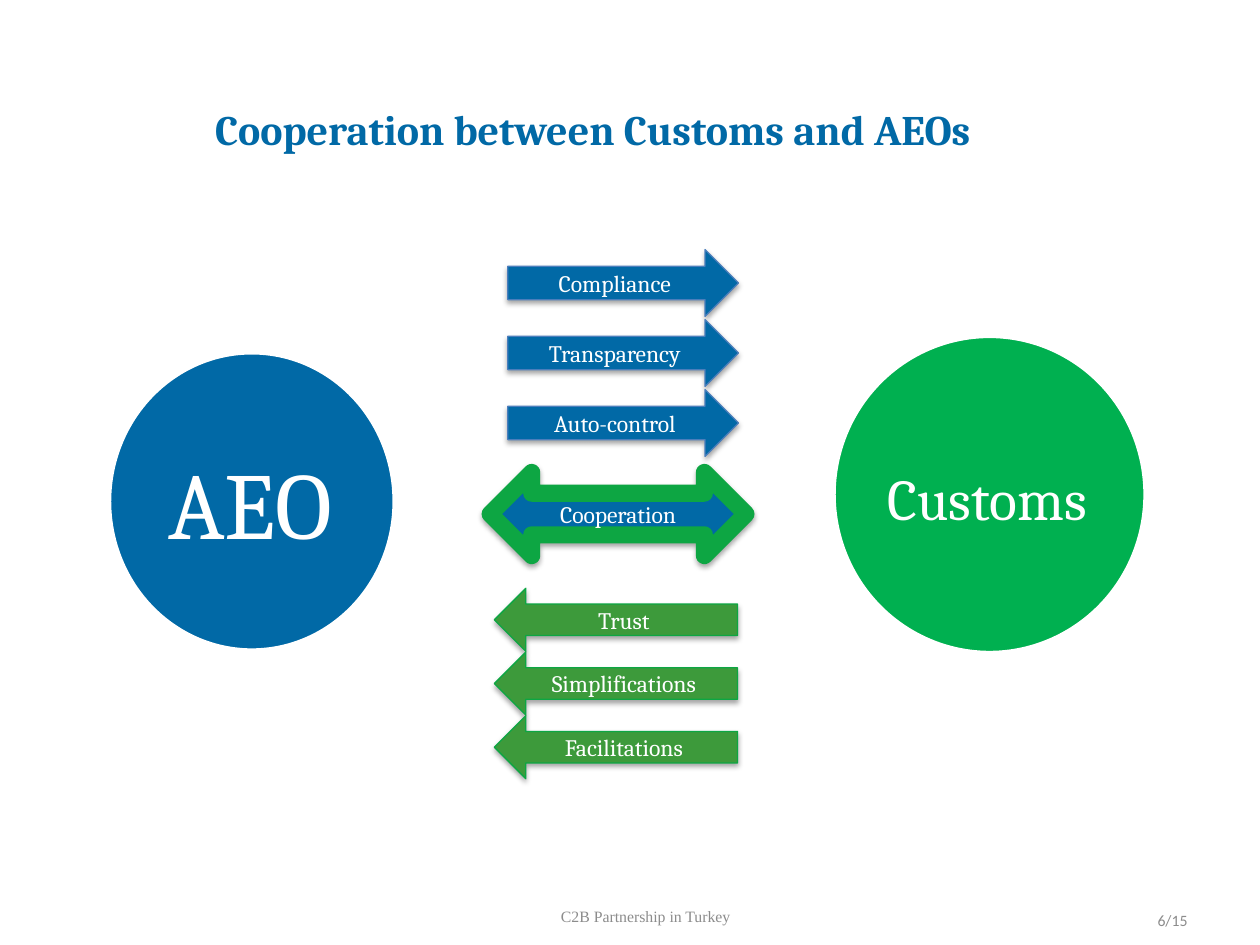
from lxml.etree import SubElement
from pptx import Presentation
from pptx.dml.color import RGBColor
from pptx.enum.shapes import MSO_SHAPE
from pptx.enum.text import MSO_ANCHOR, PP_ALIGN
from pptx.oxml.ns import qn
from pptx.util import Pt

HUES = {"blue": "0169A6", "edge": "4B7EBC", "green": "00B050", "leaf": "3D9A3B",
        "rim": "0DA643", "white": "FFFFFF", "gray": "8C8C8C", "black": "000000"}

TITLE = "Cooperation between Customs and AEOs"
# label, size, fill, circle box, label box
PARTIES = [
    ("Customs", 33, "green", (476.6, 192.2, 177.8, 180.7), (501, 232.6, 126.7, 108)),
    ("AEO", 54, "blue", (62.6, 201.6, 162.7, 169.9), (85, 239.8, 115.9, 101.5)),
]
# preset, fill, line, line width, left, top, width, height, step, labels
ARROWS = [
    (MSO_SHAPE.LEFT_RIGHT_ARROW, "blue", "rim", 9.75,
     280.1, 270, 146.2, 47.5, 0, ["Cooperation"]),
    (MSO_SHAPE.RIGHT_ARROW, "blue", "edge", 0.75,
     290.2, 142.6, 131.8, 38.2, 40, ["Compliance", "Transparency", "Auto-control"]),
    (MSO_SHAPE.LEFT_ARROW, "leaf", "rim", 0.75,
     282.5, 336.2, 139, 36, 36.4, ["Trust", "Simplifications", "Facilitations"]),
]
# text, font, alignment, box
FOOTER = [
    ("C2B Partnership in Turkey", "Times New Roman", PP_ALIGN.CENTER,
     (246.2, 509, 245.5, 28.8)),
    ("6/15", "Calibri", PP_ALIGN.RIGHT, (516.2, 511.2, 167.8, 28.8)),
]


def hue(name):
    return RGBColor.from_string(HUES[name])


def write(shape, text, size=13.5, font="Cambria", color="white", bold=False,
          align=PP_ALIGN.CENTER, pad=None, lead=None):
    frame = shape.text_frame
    frame.word_wrap = True
    frame.vertical_anchor = MSO_ANCHOR.MIDDLE
    if pad:
        frame.margin_left = frame.margin_right = Pt(pad[0])
        frame.margin_top = frame.margin_bottom = Pt(pad[1])
    para = frame.paragraphs[0]
    para.alignment = align
    if lead:
        para.line_spacing = lead
    run = para.add_run()
    run.text = text
    run.font.size, run.font.name, run.font.bold = Pt(size), font, bold
    run.font.color.rgb = hue(color)


def draw(slide, kind, box, fill, line=None, width=0):
    shape = slide.shapes.add_shape(kind, *map(Pt, box))
    shape.shadow.inherit = False
    shape.fill.solid()
    shape.fill.fore_color.rgb = hue(fill)
    if line:
        shape.line.color.rgb = hue(line)
        shape.line.width = Pt(width)
    else:
        shape.line.fill.background()
    return shape


def shade(shape):
    """Add a soft shadow straight below the shape."""
    effects = shape._element.spPr.find(qn("a:effectLst"))
    outer = SubElement(effects, qn("a:outerShdw"), blurRad=str(Pt(3.1)),
                       dist=str(Pt(1.8)), dir="5400000", rotWithShape="0")
    color = SubElement(outer, qn("a:srgbClr"), val=HUES["black"])
    SubElement(color, qn("a:alpha"), val="35000")


def main():
    deck = Presentation()
    deck.slide_width, deck.slide_height = Pt(720), Pt(540)
    slide = deck.slides.add_slide(deck.slide_layouts[5])

    title = slide.shapes.title
    title.left, title.top, title.width, title.height = map(Pt, (108.7, 56.2, 460, 34.6))
    write(title, TITLE, size=24, color="blue", bold=True)

    for text, font, align, box in FOOTER:
        note = slide.shapes.add_textbox(*map(Pt, box))
        write(note, text, size=9, font=font, color="gray", align=align, pad=(5.4, 2.7))

    for text, size, fill, ring, box in PARTIES:
        draw(slide, MSO_SHAPE.OVAL, ring, fill, "white", 2)
        label = draw(slide, MSO_SHAPE.RECTANGLE, box, fill)
        write(label, text, size=size, pad=(2, 2), lead=0.9)

    for kind, fill, line, width, left, top, wide, high, step, labels in ARROWS:
        for i, text in enumerate(labels):
            arrow = draw(slide, kind, (left, top + i * step, wide, high), fill, line, width)
            shade(arrow)
            write(arrow, text, pad=(5.4, 2.7))

    deck.save("out.pptx")


if __name__ == "__main__":
    main()
